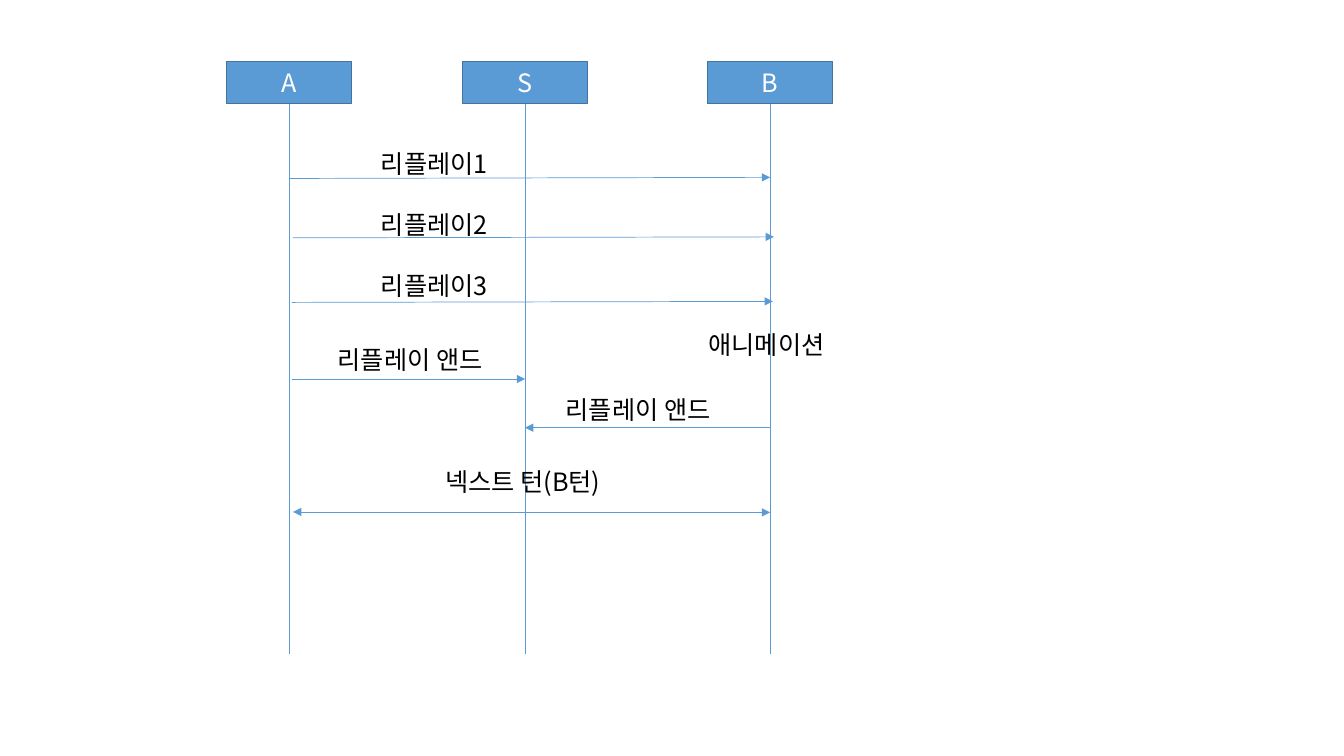
from dataclasses import dataclass

from lxml.etree import SubElement
from pptx import Presentation
from pptx.dml.color import RGBColor
from pptx.enum.shapes import MSO_CONNECTOR, MSO_SHAPE
from pptx.enum.text import MSO_ANCHOR, MSO_AUTO_SIZE, PP_ALIGN
from pptx.oxml.ns import qn
from pptx.util import Pt


@dataclass(frozen=True)
class Theme:
    font: str = "Noto Sans CJK KR"
    text_size: float = 18
    text: RGBColor = RGBColor(0x00, 0x00, 0x00)
    actor_text: RGBColor = RGBColor(0xFF, 0xFF, 0xFF)
    blue: RGBColor = RGBColor(0x5B, 0x9B, 0xD5)
    actor_border: RGBColor = RGBColor(0x43, 0x73, 0x9E)
    border_width: float = 1
    line_width: float = 0.5


ACTOR_TOP, ACTOR_WIDTH, ACTOR_HEIGHT = 44, 89.3, 30
LIFELINE_END = 467.3
LABEL_HEIGHT = 29
LIFELINES = {"A": 206.6, "S": 375.1, "B": 550.1}

# sender, receiver, start y, end y, shift of start x, shift of end x
MESSAGES = [
    ("A", "B", 127.5, 126.7, 0, 0),
    ("A", "B", 169.9, 169.2, 2.7, 2.7),
    ("A", "B", 216, 215.3, 2, 2),
    ("A", "S", 270.7, 270.7, 2, 0),
    ("B", "S", 305.5, 305.5, 0, 0),
    ("S", "A", 365.7, 365.7, 0, 2.7),
    ("S", "B", 366, 366, 0, 0),
]

# text, left, top, width, wrap
LABELS = [
    ("리플레이1", 265, 102.7, 97.2, False),
    ("리플레이2", 265, 145.8, 97.2, False),
    ("리플레이3", 265, 189.2, 97.2, False),
    ("애니메이션", 499, 231.8, 126, True),
    ("리플레이 앤드", 234.2, 242.7, 141.8, True),
    ("리플레이 앤드", 397, 278, 141.8, True),
    ("넥스트 턴(B턴)", 311, 329.8, 141.8, True),
]


def write_text(frame, text, *, theme, color, align=PP_ALIGN.LEFT,
               anchor=MSO_ANCHOR.TOP, wrap=True):
    frame.word_wrap = wrap
    frame.vertical_anchor = anchor
    paragraph = frame.paragraphs[0]
    paragraph.alignment = align
    run = paragraph.add_run()
    run.text = text
    run.font.name = theme.font
    run.font.size = Pt(theme.text_size)
    run.font.color.rgb = color
    # Korean letters take the East Asian typeface
    SubElement(run.font._element, qn("a:ea"), typeface=theme.font)


class SequenceDiagram:
    def __init__(self, slide, theme):
        self.slide = slide
        self.theme = theme

    def actor(self, name, center):
        box = self.slide.shapes.add_shape(
            MSO_SHAPE.RECTANGLE, Pt(center - ACTOR_WIDTH / 2), Pt(ACTOR_TOP),
            Pt(ACTOR_WIDTH), Pt(ACTOR_HEIGHT))
        box.shadow.inherit = False
        box.fill.solid()
        box.fill.fore_color.rgb = self.theme.blue
        box.line.color.rgb = self.theme.actor_border
        box.line.width = Pt(self.theme.border_width)
        write_text(box.text_frame, name, theme=self.theme,
                   color=self.theme.actor_text, align=PP_ALIGN.CENTER,
                   anchor=MSO_ANCHOR.MIDDLE)

    def line(self, start, end, arrow=False):
        connector = self.slide.shapes.add_connector(
            MSO_CONNECTOR.STRAIGHT, *map(Pt, start + end))
        connector.line.color.rgb = self.theme.blue
        connector.line.width = Pt(self.theme.line_width)
        properties = connector._element.spPr
        if arrow:
            SubElement(properties.find(qn("a:ln")), qn("a:tailEnd"),
                       type="triangle")
        SubElement(properties, qn("a:effectLst"))

    def label(self, text, left, top, width, wrap):
        box = self.slide.shapes.add_textbox(
            Pt(left), Pt(top), Pt(width), Pt(LABEL_HEIGHT))
        write_text(box.text_frame, text, theme=self.theme,
                   color=self.theme.text, wrap=wrap)
        box.text_frame.auto_size = MSO_AUTO_SIZE.SHAPE_TO_FIT_TEXT


def main():
    presentation = Presentation()
    presentation.slide_width = Pt(960)
    presentation.slide_height = Pt(540)
    blank = presentation.slide_layouts[6]
    diagram = SequenceDiagram(presentation.slides.add_slide(blank), Theme())

    for name, center in LIFELINES.items():
        diagram.actor(name, center)
        diagram.line((center, ACTOR_TOP + ACTOR_HEIGHT), (center, LIFELINE_END))
    for sender, receiver, start_y, end_y, start_shift, end_shift in MESSAGES:
        diagram.line((LIFELINES[sender] + start_shift, start_y),
                     (LIFELINES[receiver] + end_shift, end_y), arrow=True)
    for label in LABELS:
        diagram.label(*label)

    presentation.save("out.pptx")


if __name__ == "__main__":
    main()
